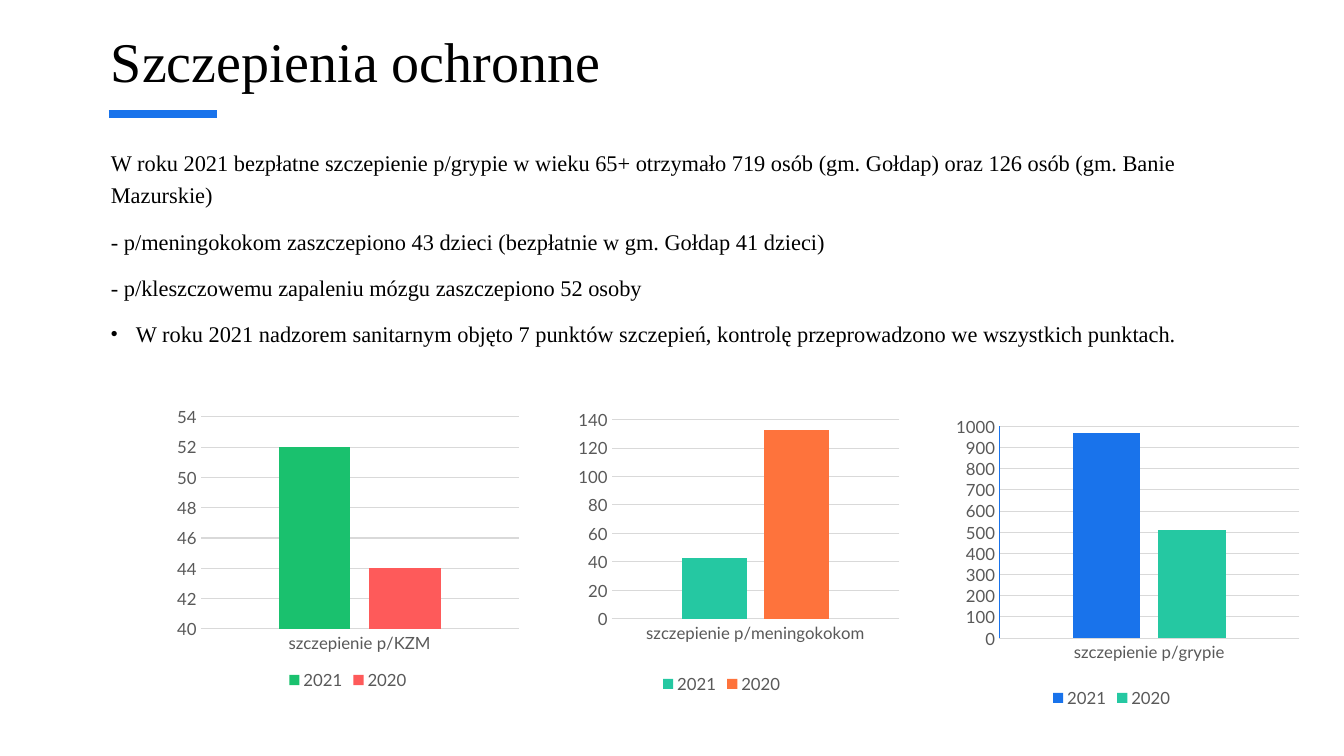
from lxml.etree import SubElement
from pptx import Presentation
from pptx.chart.data import CategoryChartData
from pptx.dml.color import RGBColor
from pptx.enum.chart import XL_CHART_TYPE, XL_LEGEND_POSITION, XL_TICK_MARK
from pptx.enum.shapes import MSO_CONNECTOR
from pptx.enum.text import MSO_ANCHOR
from pptx.oxml import parse_xml
from pptx.oxml.ns import nsdecls, qn
from pptx.util import Pt

PX = 914400 / 100.8
BLUE, TEAL, GRID, GREY = "1973EB", "25C8A2", "D9D9D9", "595959"


def px(*lengths):
    return [round(length * PX) for length in lengths]


def paint(target, color, **values):
    target.rgb = RGBColor.from_string(color)
    return values


prs = Presentation()
prs.slide_width, prs.slide_height = px(1344, 756)
slide = prs.slides.add_slide(prs.slide_layouts[6])

accent = slide.shapes.add_connector(MSO_CONNECTOR.STRAIGHT, *px(109, 114, 217, 114))
accent.line.width = Pt(6)
paint(accent.line.color, BLUE)
SubElement(accent.element.spPr, qn("a:effectLst"))

frame_format = {"word_wrap": True, "vertical_anchor": MSO_ANCHOR.TOP}
body_format = {"line_spacing": 1.2, "space_before": Pt(10)}
texts = [
    ((101, 22, 1142, 80), 40, {}, ["Szczepienia ochronne"]),
    ((101, 139, 1142, 409), 16, body_format, [
        "W roku 2021 bezpłatne szczepienie p/grypie w wieku 65+ otrzymało 719 osób (gm. Gołdap) oraz 126 osób (gm. Banie Mazurskie)",
        "- p/meningokokom zaszczepiono 43 dzieci (bezpłatnie w gm. Gołdap 41 dzieci)",
        "- p/kleszczowemu zapaleniu mózgu zaszczepiono 52 osoby",
        "W roku 2021 nadzorem sanitarnym objęto 7 punktów szczepień, kontrolę przeprowadzono we wszystkich punktach.",
    ]),
]
for box, size, paragraph_format, lines in texts:
    frame = slide.shapes.add_textbox(*px(*box)).text_frame
    for name, value in frame_format.items():
        setattr(frame, name, value)
    for index, line in enumerate(lines):
        paragraph = frame.add_paragraph() if index else frame.paragraphs[0]
        for name, value in paragraph_format.items():
            setattr(paragraph, name, value)
        run = paragraph.add_run()
        run.text = line
        run.font.name, run.font.size = "Times New Roman", Pt(size)
        paint(run.font.color, "000000")

inspection = paragraph.element if hasattr(paragraph, "element") else paragraph._p
bullet = inspection.get_or_add_pPr()
indent, = px(25)
bullet.set("marL", str(indent))
bullet.set("indent", str(-indent))
SubElement(bullet, qn("a:buSzPct")).set("val", "87000")
SubElement(bullet, qn("a:buFont")).set("typeface", "Arial")
SubElement(bullet, qn("a:buChar")).set("char", "•")

vaccinations = [
    ("szczepienie p/grypie", (924, 405, 376, 307), (970, 510), (BLUE, TEAL),
     (0, 1000, 100), BLUE, (0.2, 0.07, 0.8, 0.69)),
    ("szczepienie p/meningokokom", (544, 405, 356, 293), (43, 133), (TEAL, "FE733C"),
     (0, 140, 20), None, (0.19, 0.05, 0.81, 0.68)),
    ("szczepienie p/KZM", (170, 401, 356, 293), (52, 44), ("1AC16E", "FE5A5A"),
     (40, 54, 2), None, None),
]
axis_format = {"major_tick_mark": XL_TICK_MARK.NONE, "minor_tick_mark": XL_TICK_MARK.NONE}
legend_format = {"position": XL_LEGEND_POSITION.BOTTOM, "include_in_layout": False}
plot_format = {"gap_width": 219, "overlap": -27, "vary_by_categories": False}

for vaccine, box, counts, colors, scale, axis_color, layout in vaccinations:
    data = CategoryChartData()
    data.categories = [vaccine]
    for year, count in zip(("2021", "2020"), counts):
        data.add_series(year, [count])
    chart = slide.shapes.add_chart(XL_CHART_TYPE.COLUMN_CLUSTERED, *px(*box), data).chart
    chart.has_title, chart.has_legend = False, True
    plot, legend = chart.plots[0], chart.legend
    categories, values = chart.category_axis, chart.value_axis
    scale_format = dict(zip(("minimum_scale", "maximum_scale", "major_unit"), scale))
    for part, settings in (
        (plot, plot_format),
        (legend, legend_format),
        (categories, axis_format),
        (values, axis_format | scale_format),
    ):
        for name, value in settings.items():
            setattr(part, name, value)

    for font, size, color in (
        (chart.font, 10, "000000"),
        (legend.font, 12, GREY),
        (categories.tick_labels.font, 12, GREY),
        (values.tick_labels.font, 12, GREY),
    ):
        font.name, font.size = "Lato", Pt(size)
        paint(font.color, color)

    values.has_major_gridlines = True
    for line, color in (
        (categories.format.line, GRID),
        (values.format.line, axis_color),
        (values.major_gridlines.format.line, GRID),
    ):
        if color:
            line.width = Pt(0.75)
            paint(line.color, color)
        else:
            line.fill.background()

    for series, color in zip(plot.series, colors):
        series.format.fill.solid()
        paint(series.format.fill.fore_color, color)

    if layout:
        plot_area = chart.element.find(".//" + qn("c:plotArea"))
        for automatic in plot_area.findall(qn("c:layout")):
            plot_area.remove(automatic)
        sides = "".join(f'<c:{side} val="{share}"/>' for side, share in zip("xywh", layout))
        plot_area.insert(0, parse_xml(
            f'<c:layout {nsdecls("c")}><c:manualLayout><c:layoutTarget val="inner"/>'
            f'<c:xMode val="edge"/><c:yMode val="edge"/>{sides}</c:manualLayout></c:layout>'))

prs.save("out.pptx")
